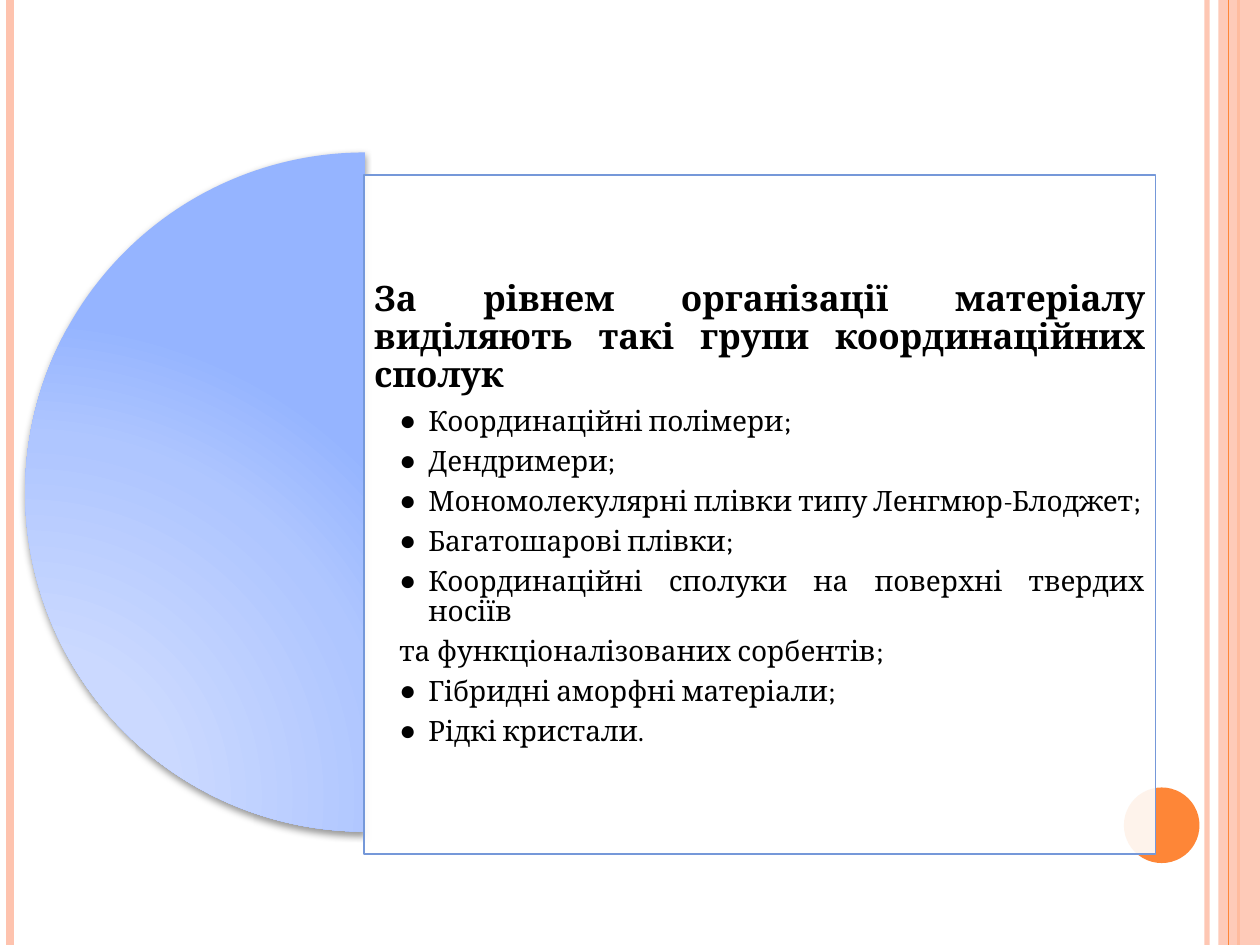
from lxml import etree
from pptx import Presentation
from pptx.dml.color import RGBColor
from pptx.enum.shapes import MSO_CONNECTOR as CONN, MSO_SHAPE as SHAPE
from pptx.enum.text import MSO_ANCHOR, MSO_AUTO_SIZE, PP_ALIGN
from pptx.oxml import parse_xml
from pptx.oxml.ns import nsdecls, qn
from pptx.util import Inches, Pt

WIDTH, HEIGHT = 10, 7.5
PEACH = RGBColor(0xFE, 0xC3, 0xAE)
ORANGE = RGBColor(0xFE, 0x86, 0x37)
BLUE = RGBColor(0x75, 0x98, 0xD9)
WHITE = RGBColor(0xFF, 0xFF, 0xFF)
BLACK = RGBColor(0, 0, 0)
GRADIENT = [(0, "CFDCFF"), (30, "CBD9FF"), (75, "AFC6FF"), (100, "95B4FF")]

FONT, BULLET_FONT = "Cambria", "Times New Roman"
DIAMETER = 5.39
PANEL = (2.89, 1.39, 6.28, DIAMETER)
TEXT_X, BULLET_X, TAB_X = 0.43, 0.2, 0.64

HEADING = "За рівнем організації матеріалу виділяють такі групи координаційних сполук"
# (text, has a bullet)
ITEMS = [
    ("Координаційні полімери;", True),
    ("Дендримери;", True),
    ("Мономолекулярні плівки типу Ленгмюр-Блоджет;", True),
    ("Багатошарові плівки;", True),
    ("Координаційні сполуки на поверхні твердих носіїв", True),
    ("та\tфункціоналізованих сорбентів;", False),
    ("Гібридні аморфні матеріали;", True),
    ("Рідкі кристали.", True),
]


def set_alpha(fill, percent):
    """Make a solid a:solidFill colour partly transparent."""
    color = fill.find(qn("a:srgbClr"))
    etree.SubElement(color, qn("a:alpha")).set("val", str(percent * 1000))


def add_stripe(slide, x, color, width, alpha=100):
    line = slide.shapes.add_connector(
        CONN.STRAIGHT, Inches(x), 0, Inches(x), Inches(HEIGHT))
    line.line.color.rgb = color
    line.line.width = Pt(width)
    sp_pr = line._element.spPr
    if alpha < 100:
        set_alpha(sp_pr.find(qn("a:ln")).find(qn("a:solidFill")), alpha)
    etree.SubElement(sp_pr, qn("a:effectLst"))


def add_plain(slide, kind, box, color, alpha=100):
    sp = slide.shapes.add_shape(kind, *map(Inches, box))
    sp.fill.solid()
    sp.fill.fore_color.rgb = color
    sp.line.fill.background()
    sp.shadow.inherit = False
    if alpha < 100:
        set_alpha(sp._element.spPr.find(qn("a:solidFill")), alpha)
    return sp


def add_half_disc(slide, box):
    sp = add_plain(slide, SHAPE.PIE, box, BLUE)
    sp.adjustments[0], sp.adjustments[1] = 54, 162  # 90 to 270 degrees
    stops = "".join(f'<a:gs pos="{pos * 1000}"><a:srgbClr val="{c}"/></a:gs>'
                    for pos, c in GRADIENT)
    gradient = parse_xml(
        f'<a:gradFill {nsdecls("a")} rotWithShape="1"><a:gsLst>{stops}</a:gsLst>'
        '<a:path path="circle"><a:fillToRect l="5000" t="100000" r="120000" '
        'b="10000"/></a:path></a:gradFill>')
    shadow = parse_xml(
        f'<a:outerShdw {nsdecls("a")} blurRad="{Pt(4)}" dist="{Pt(2)}" '
        'dir="5400000" rotWithShape="0"><a:srgbClr val="000000">'
        '<a:alpha val="40000"/></a:srgbClr></a:outerShdw>')
    sp_pr = sp._element.spPr
    sp_pr.replace(sp_pr.find(qn("a:solidFill")), gradient)
    sp_pr.find(qn("a:effectLst")).append(shadow)


def format_paragraph(p, size, bold=False, left=0, first=0, bullet=False, tab=None):
    p.alignment = PP_ALIGN.JUSTIFY
    p.line_spacing = 0.9
    p.space_before = Pt(0)
    p.space_after = Pt(size * 0.35)
    for r in p.runs:
        r.font.name, r.font.size, r.font.bold = FONT, Pt(size), bold
        r.font.color.rgb = BLACK
    p_pr = p._p.get_or_add_pPr()
    p_pr.set("marL", str(Inches(left)))
    p_pr.set("indent", str(Inches(first)))
    if bullet:
        etree.SubElement(p_pr, qn("a:buFont")).set("typeface", BULLET_FONT)
        etree.SubElement(p_pr, qn("a:buChar")).set("char", "●")
    else:
        etree.SubElement(p_pr, qn("a:buNone"))
    if tab:
        stop = etree.SubElement(etree.SubElement(p_pr, qn("a:tabLst")), qn("a:tab"))
        stop.set("pos", str(Inches(tab)))
        stop.set("algn", "l")


def fill_panel(slide, sp):
    sp.left, sp.top, sp.width, sp.height = map(Inches, PANEL)
    sp.fill.solid()
    sp.fill.fore_color.rgb = WHITE
    set_alpha(sp._element.spPr.find(qn("a:solidFill")), 90)
    sp.line.color.rgb = BLUE
    sp.line.width = Pt(1)

    tf = sp.text_frame
    tf.word_wrap = True
    tf.auto_size = MSO_AUTO_SIZE.NONE
    tf.vertical_anchor = MSO_ANCHOR.MIDDLE
    tf.margin_left = tf.margin_right = Inches(0.08)
    tf.margin_top = tf.margin_bottom = Inches(0.08)
    tf.text = HEADING
    format_paragraph(tf.paragraphs[0], 20, bold=True)
    for text, bullet in ITEMS:
        p = tf.add_paragraph()
        p.text = text
        if bullet:
            format_paragraph(p, 16, left=TEXT_X, first=BULLET_X - TEXT_X, bullet=True)
        else:
            format_paragraph(p, 16, first=BULLET_X, tab=TAB_X)
    # Bring the panel in front of the decoration
    slide.shapes._spTree.append(sp._element)


def main():
    prs = Presentation()
    prs.slide_width, prs.slide_height = Inches(WIDTH), Inches(HEIGHT)
    slide = prs.slides.add_slide(prs.slide_layouts[1])
    title, body = slide.placeholders
    title._element.getparent().remove(title._element)

    # Side stripes and corner dot
    add_stripe(slide, 9.58, PEACH, 3, alpha=93)
    add_stripe(slide, 0.08, PEACH, 4.5)
    add_stripe(slide, 9.83, ORANGE, 1.5)
    add_plain(slide, SHAPE.RECTANGLE, (9.67, 0, 0.33, HEIGHT), PEACH, alpha=87)
    add_stripe(slide, 9.75, ORANGE, 0.75)
    add_plain(slide, SHAPE.OVAL, (8.92, 6.25, 0.6, 0.6), ORANGE)

    # Half disc with the list panel
    add_half_disc(slide, (0.2, 1.21, DIAMETER, DIAMETER))
    fill_panel(slide, body)

    prs.save("out.pptx")


if __name__ == "__main__":
    main()
